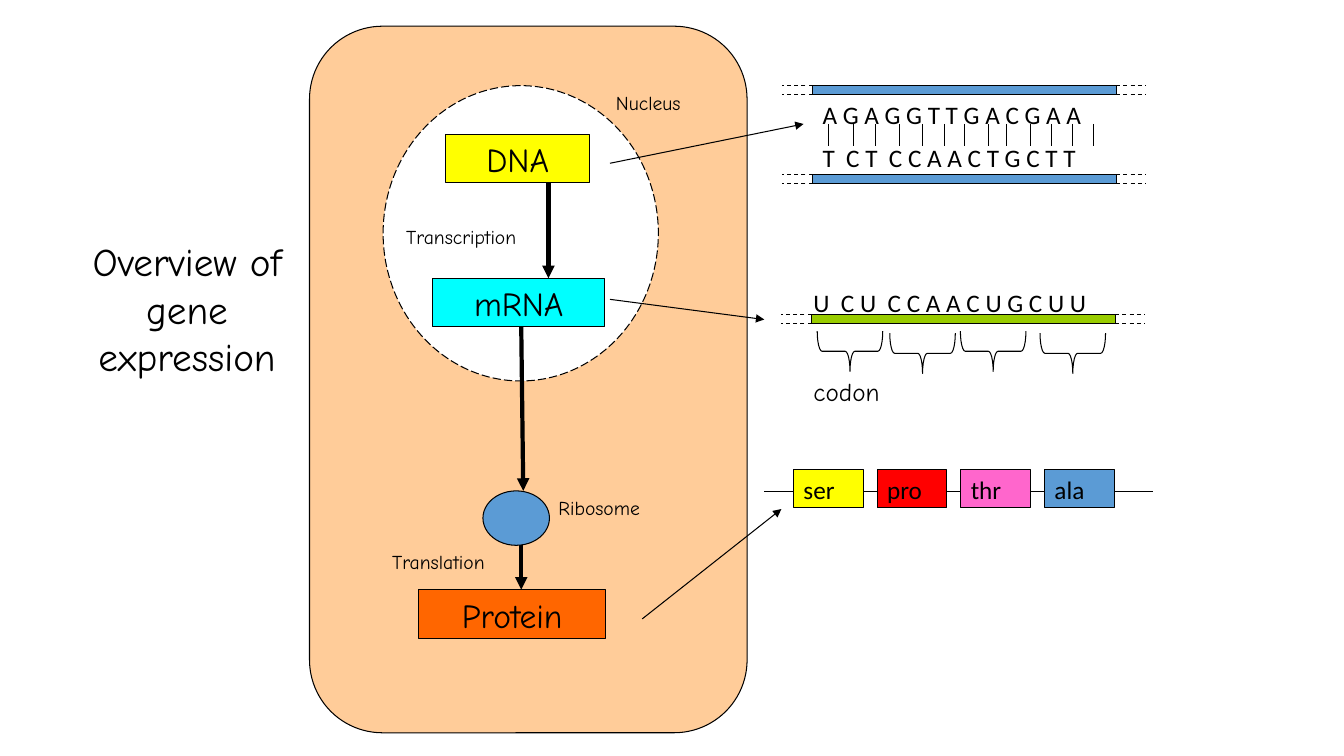
from dataclasses import dataclass

from lxml.etree import SubElement
from pptx import Presentation
from pptx.dml.color import RGBColor
from pptx.enum.dml import MSO_LINE
from pptx.enum.shapes import MSO_CONNECTOR, MSO_SHAPE
from pptx.enum.text import MSO_ANCHOR, PP_ALIGN
from pptx.oxml.ns import qn
from pptx.util import Inches, Pt


@dataclass(frozen=True)
class Theme:
    ink: str = "000000"
    white: str = "FFFFFF"
    cell: str = "FFCC99"
    yellow: str = "FFFF00"
    cyan: str = "00FFFF"
    orange: str = "FF6600"
    blue: str = "5B9BD5"
    green: str = "99CC00"
    red: str = "FF0000"
    pink: str = "FF66CC"
    label_font: str = "Comic Neue"
    sequence_font: str = "Calibri"
    title: int = 28
    molecule: int = 24
    sequence: int = 18
    label: int = 14
    thin: float = 0.75
    thick: float = 3


THEME = Theme()

# Places are left, top, width, height in inches.
CELL = (3.07, 0.26, 4.34, 7.01)
NUCLEUS = (3.8, 0.85, 2.73, 2.93)
RIBOSOME = (4.79, 4.87, 0.66, 0.54)
TITLE = ("Overview of gene expression", (0.64, 2.31, 2.43, 1.4))
MOLECULES = [
    ("DNA", (4.42, 1.33, 1.43, 0.48), THEME.yellow),
    ("mRNA", (4.29, 2.76, 1.71, 0.48), THEME.cyan),
    ("Protein", (4.15, 5.85, 1.86, 0.48), THEME.orange),
]
LABELS = [  # text, left, top
    ("Transcription", 3.93, 2.18),
    ("Translation", 3.79, 5.41),
    ("Ribosome", 5.44, 4.87),
    ("Nucleus", 6.01, 0.85),
]
STEP_ARROWS = [
    ((5.44, 1.81), (5.44, 2.76)),
    ((5.17, 3.24), (5.19, 4.87)),
    ((5.17, 5.41), (5.17, 5.85)),
]
DETAIL_ARROWS = [
    ((6.05, 1.62), (7.97, 1.23)),
    ((6.05, 2.97), (7.58, 3.17)),
    ((6.37, 6.14), (7.75, 5.05)),
]
STRANDS = [  # left, top, colour
    (8.06, 0.85, THEME.blue),
    (8.06, 1.73, THEME.blue),
    (8.05, 3.12, THEME.green),
]
STRAND_WIDTH, STRAND_HEIGHT, DASH_LENGTH = 3.01, 0.09, 0.3
DNA_SEQUENCE = ["A G A G G T T G A C G A A", "T  C T  C C A A C T G C T T"]
RNA_SEQUENCE = ["U  C U  C C A A C U G C U U"]
BASE_PAIRS = [8.22, 8.47, 8.68, 8.92, 9.15, 9.37, 9.57, 9.8, 9.98, 10.22,
              10.43, 10.64, 10.85]
PAIR_TOP, PAIR_BOTTOM = 1.23, 1.45
CODON_BRACES = [(8.23, 3.16), (8.95, 3.18), (9.65, 3.16), (10.44, 3.18)]
AMINO_ACIDS = [
    ("ser", THEME.yellow),
    ("pro", THEME.red),
    ("thr", THEME.pink),
    ("ala", THEME.blue),
]
ACID_LEFT, ACID_TOP, ACID_STEP = 7.87, 4.66, 0.83
CHAIN = ((7.58, 4.88), (11.44, 4.88))

deck = Presentation()
deck.slide_width, deck.slide_height = Inches(13.33), Inches(7.5)
page = deck.slides.add_slide(deck.slide_layouts[6])


def style_line(line, width=THEME.thin, dash=None):
    line.color.rgb = RGBColor.from_string(THEME.ink)
    line.width = Pt(width)
    if dash is not None:
        line.dash_style = dash


def add_figure(kind, place, fill=None, dash=None):
    figure = page.shapes.add_shape(kind, *map(Inches, place))
    figure.shadow.inherit = False
    if fill:
        figure.fill.solid()
        figure.fill.fore_color.rgb = RGBColor.from_string(fill)
    else:
        figure.fill.background()
    style_line(figure.line, dash=dash)
    return figure


def write(shape, lines, size, font=THEME.label_font, align=PP_ALIGN.LEFT):
    frame = shape.text_frame
    frame.word_wrap = True
    frame.vertical_anchor = MSO_ANCHOR.TOP
    frame.text = "\n".join(lines)
    for index, paragraph in enumerate(frame.paragraphs):
        paragraph.alignment = align
        if index:
            paragraph.space_before = Pt(size / 2)
        paragraph.font.size = Pt(size)
        paragraph.font.name = font
        paragraph.font.color.rgb = RGBColor.from_string(THEME.ink)


def add_text(lines, place, size, **style):
    box = page.shapes.add_textbox(*map(Inches, place))
    write(box, lines, size, **style)


def add_line(start, end, width=THEME.thin, dash=None, arrow=False):
    line = page.shapes.add_connector(
        MSO_CONNECTOR.STRAIGHT, *map(Inches, (*start, *end)))
    style_line(line.line, width, dash)
    properties = line._element.spPr
    if arrow:
        SubElement(properties.find(qn("a:ln")), qn("a:tailEnd"), type="triangle")
    SubElement(properties, qn("a:effectLst"))


def add_strand(left, top, fill):
    """Draw a bar whose two edges run on as dashes at both ends."""
    right = left + STRAND_WIDTH
    add_figure(MSO_SHAPE.RECTANGLE, (left, top, STRAND_WIDTH, STRAND_HEIGHT), fill)
    for y in (top, top + STRAND_HEIGHT):
        for inner, outer in ((left, left - DASH_LENGTH), (right, right + DASH_LENGTH)):
            add_line((inner, y), (outer, y), dash=MSO_LINE.DASH)


def draw_cell():
    add_figure(MSO_SHAPE.ROUNDED_RECTANGLE, CELL, THEME.cell)
    add_figure(MSO_SHAPE.OVAL, NUCLEUS, THEME.white, MSO_LINE.LONG_DASH)
    for name, place, fill in MOLECULES:
        molecule = add_figure(MSO_SHAPE.RECTANGLE, place, fill)
        write(molecule, [name], THEME.molecule, align=PP_ALIGN.CENTER)
    for start, end in STEP_ARROWS:
        add_line(start, end, THEME.thick, arrow=True)
    add_figure(MSO_SHAPE.OVAL, RIBOSOME, THEME.blue)
    for text, left, top in LABELS:
        add_text([text], (left, top, 2.05, 0.31), THEME.label)


def draw_sequences():
    for strand in STRANDS:
        add_strand(*strand)
    add_text(DNA_SEQUENCE, (8.06, 0.94, 3.43, 0.8), THEME.sequence,
             font=THEME.sequence_font)
    add_text(RNA_SEQUENCE, (7.97, 2.8, 3.43, 0.37), THEME.sequence,
             font=THEME.sequence_font)
    for x in BASE_PAIRS:
        add_line((x, PAIR_TOP), (x, PAIR_BOTTOM))
    for left, top in CODON_BRACES:
        brace = add_figure(MSO_SHAPE.RIGHT_BRACE, (left, top, 0.4, 0.65))
        brace.adjustments[0] = 0.12
        brace.rotation = 90
    add_text(["codon"], (7.97, 3.68, 1.04, 0.37), THEME.sequence)


def draw_protein():
    add_line(*CHAIN)
    for index, (name, fill) in enumerate(AMINO_ACIDS):
        place = (ACID_LEFT + index * ACID_STEP, ACID_TOP, 0.69, 0.38)
        acid = add_figure(MSO_SHAPE.RECTANGLE, place, fill)
        write(acid, [name], THEME.sequence, font=THEME.sequence_font)


draw_cell()
add_text([TITLE[0]], TITLE[1], THEME.title, align=PP_ALIGN.CENTER)
draw_sequences()
draw_protein()
for start, end in DETAIL_ARROWS:
    add_line(start, end, arrow=True)
deck.save("out.pptx")
